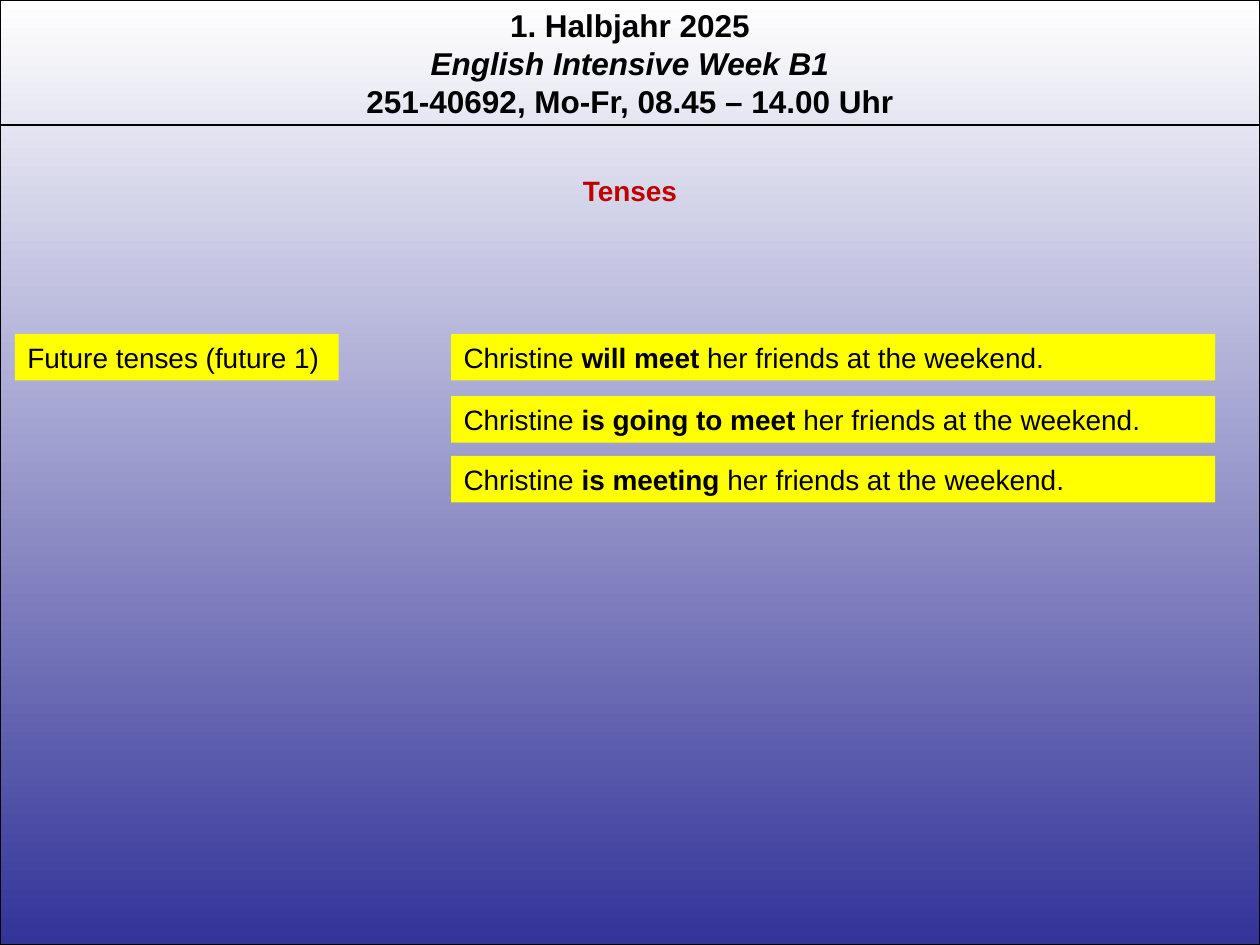
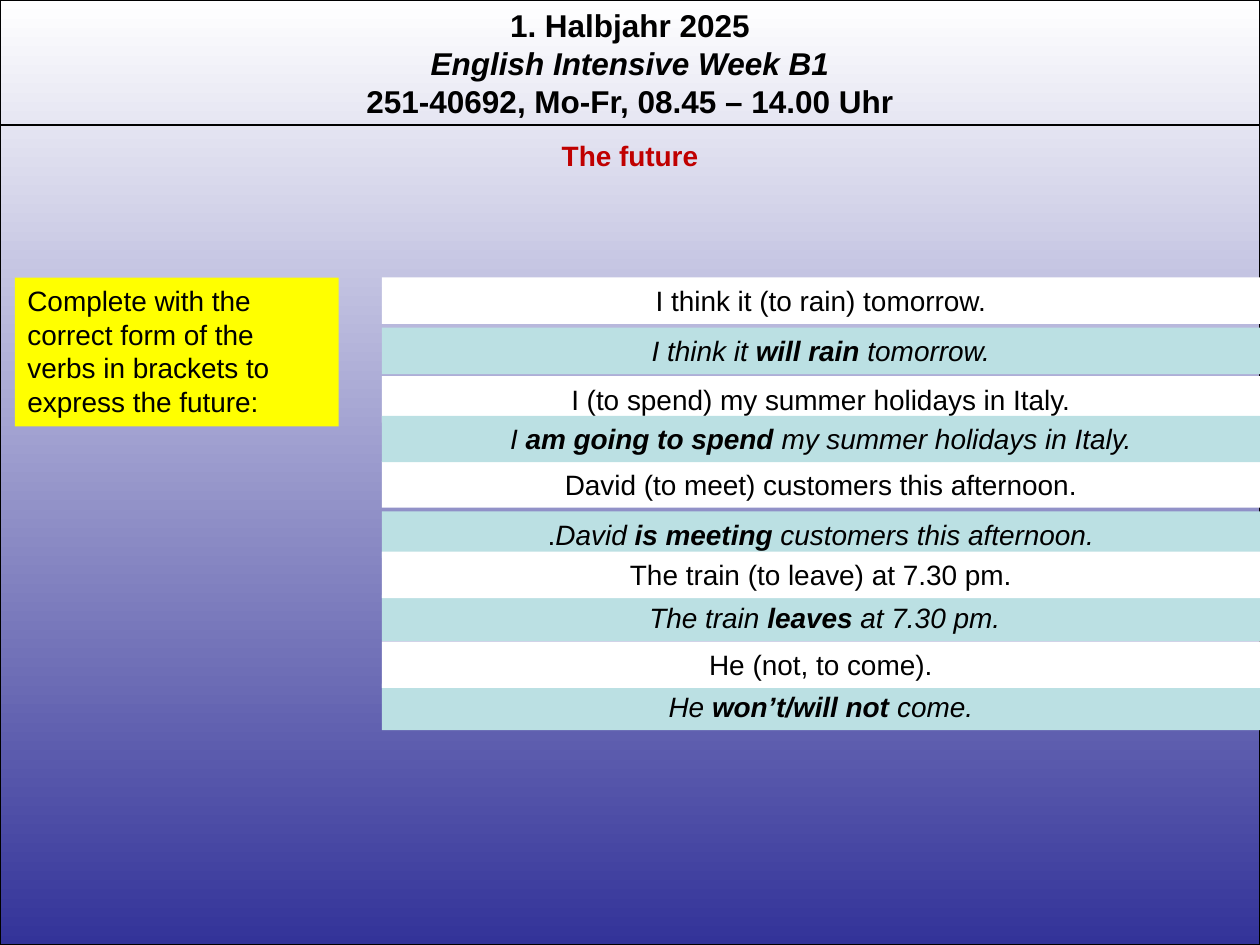
from dataclasses import dataclass

from lxml import etree
from pptx import Presentation
from pptx.dml.color import RGBColor
from pptx.enum import shapes, text
from pptx.oxml.ns import qn
from pptx.util import Pt

BLACK = RGBColor(0x00, 0x00, 0x00)
WHITE = RGBColor(0xFF, 0xFF, 0xFF)
INDIGO = RGBColor(0x33, 0x33, 0x99)
RED = RGBColor(0xC0, 0x00, 0x00)
YELLOW = RGBColor(0xFF, 0xFF, 0x00)
AQUA = RGBColor(0xBB, 0xE0, 0xE3)

FONT = "Arial"
SLIDE_W, SLIDE_H = 720, 540
HEADER_H = 71.5
BAR_H = 26.6
LABEL_LEFT, LABEL_W = 8.6, 185
EXAMPLE_LEFT, EXAMPLE_W = 257.8, 436.5
EXERCISE_LEFT = 218.2
EXERCISE_W = SLIDE_W - EXERCISE_LEFT
LEFT, CENTER = text.PP_ALIGN.LEFT, text.PP_ALIGN.CENTER


@dataclass(frozen=True)
class Run:
    text: str
    bold: bool = False
    italic: bool = False


@dataclass(frozen=True)
class Bar:
    left: float
    top: float
    width: float
    runs: tuple[Run, ...]
    fill: RGBColor = YELLOW
    align: text.PP_ALIGN = LEFT
    height: float = BAR_H


def label(top: float, words: str, height: float = BAR_H) -> Bar:
    return Bar(LABEL_LEFT, top, LABEL_W, (Run(words),), height=height)


def example(top: float, verb: str) -> Bar:
    runs = Run("Christine "), Run(verb, bold=True), Run(" her friends at the weekend.")
    return Bar(EXAMPLE_LEFT, top, EXAMPLE_W, runs)


def question(top: float, words: str) -> Bar:
    return Bar(EXERCISE_LEFT, top, EXERCISE_W, (Run(words),), WHITE, CENTER)


def answer(top: float, before: str, verb: str, after: str, lead: str = "") -> Bar:
    """Italic solution with a bold verb; lead is upright text in front of it."""
    runs = (Run(before, italic=True), Run(verb, bold=True, italic=True),
            Run(after, italic=True))
    if lead:
        runs = (Run(lead), *runs)
    return Bar(EXERCISE_LEFT, top, EXERCISE_W, runs, AQUA, CENTER)


HEADER = (
    Run("1. Halbjahr 2025", bold=True),
    Run("English Intensive Week B1", bold=True, italic=True),
    Run("251-40692, Mo-Fr, 08.45 – 14.00 Uhr", bold=True),
)

TENSES = (
    label(190.8, "Future tenses (future 1)"),
    example(190.8, "will meet"),
    example(226.4, "is going to meet"),
    example(260.6, "is meeting"),
)

# Neighbouring bars overlap, so these stand in stacking order.
FUTURE = (
    label(158.6, "Complete with the correct form of the verbs in brackets "
                 "to express the future:", height=85),
    question(158.6, "I think it (to rain) tomorrow."),
    answer(187.2, "I think it ", "will rain", " tomorrow."),
    question(263.6, "David (to meet) customers this afternoon."),
    answer(292.2, "David ", "is meeting", " customers this afternoon.", lead="."),
    answer(339.8, "The train ", "leaves", " at 7.30 pm.", lead=" "),
    answer(390.7, "He ", "won’t/will not", " come."),
    question(315.2, "The train (to leave) at 7.30 pm."),
    question(366.5, "He (not, to come)."),
    question(215, "I (to spend) my summer holidays in Italy."),
    answer(237.6, "I ", "am going to spend", " my summer holidays in Italy."),
)


def add_runs(p, runs: tuple[Run, ...], size: float = 16, color: RGBColor = BLACK) -> None:
    for run in runs:
        r = p.add_run()
        r.text = run.text
        r.font.color.rgb = color
        style = {"name": FONT, "size": Pt(size), "bold": run.bold, "italic": run.italic}
        for key, value in style.items():
            setattr(r.font, key, value)


def set_frame(tf) -> None:
    style = {"word_wrap": True, "auto_size": text.MSO_AUTO_SIZE.NONE,
             "vertical_anchor": text.MSO_ANCHOR.TOP}
    for key, value in style.items():
        setattr(tf, key, value)


def add_rect(slide, left: float, top: float, width: float, height: float):
    sp = slide.shapes.add_shape(shapes.MSO_SHAPE.RECTANGLE,
                                Pt(left), Pt(top), Pt(width), Pt(height))
    sp.shadow.inherit = False
    return sp


def add_bar(slide, bar: Bar) -> None:
    sp = add_rect(slide, bar.left, bar.top, bar.width, bar.height)
    sp.fill.solid()
    sp.fill.fore_color.rgb = bar.fill
    sp.line.fill.background()
    set_frame(sp.text_frame)
    p = sp.text_frame.paragraphs[0]
    p.alignment = bar.align
    add_runs(p, bar.runs)


def add_backdrop(slide):
    sp = add_rect(slide, 0, 0, SLIDE_W, SLIDE_H)
    sp.fill.gradient()
    sp.fill.gradient_angle = 270
    for stop, color in zip(sp.fill.gradient_stops, (WHITE, INDIGO)):
        stop.color.rgb = color
    sp.line.color.rgb = BLACK
    sp.line.width = Pt(0.75)
    return sp


def add_header(slide):
    sp = slide.shapes.add_textbox(0, 0, Pt(SLIDE_W), Pt(72.7))
    tf = sp.text_frame
    set_frame(tf)
    for i, run in enumerate(HEADER):
        p = tf.add_paragraph() if i else tf.paragraphs[0]
        p.alignment = CENTER
        add_runs(p, (run,), size=18)
    return sp


def add_header_rule(slide):
    line = slide.shapes.add_connector(shapes.MSO_CONNECTOR.STRAIGHT,
                                      0, Pt(HEADER_H), Pt(SLIDE_W), Pt(HEADER_H))
    line.line.color.rgb = BLACK
    line.line.width = Pt(0.75)
    etree.SubElement(line.element.spPr, qn("a:effectLst"))
    return line


def furnish_layout(layout, slide) -> None:
    """Build the shared elements on a slide and move them into its layout."""
    for sp in list(layout.placeholders):
        if sp.placeholder_format.type != shapes.PP_PLACEHOLDER.TITLE:
            sp.element.getparent().remove(sp.element)
    for i, add in enumerate((add_backdrop, add_header, add_header_rule)):
        layout.shapes.element.insert(2 + i, add(slide).element)


def set_title(slide, top: float, words: str) -> None:
    sp = slide.shapes.title
    box = {"left": 0, "top": Pt(top), "width": Pt(SLIDE_W), "height": Pt(BAR_H)}
    for key, value in box.items():
        setattr(sp, key, value)
    set_frame(sp.text_frame)
    p = sp.text_frame.paragraphs[0]
    p.alignment = CENTER
    add_runs(p, (Run(words, bold=True),), color=RED)


def main() -> None:
    prs = Presentation()
    prs.slide_width, prs.slide_height = Pt(SLIDE_W), Pt(SLIDE_H)
    layout = prs.slide_layouts.get_by_name("Title Only")
    pages = ((95.8, "Tenses", TENSES), (75.6, "The future", FUTURE))
    for i, (top, title, bars) in enumerate(pages):
        slide = prs.slides.add_slide(layout)
        if i == 0:
            furnish_layout(layout, slide)
        set_title(slide, top, title)
        for bar in bars:
            add_bar(slide, bar)
    prs.save("out.pptx")


if __name__ == "__main__":
    main()
